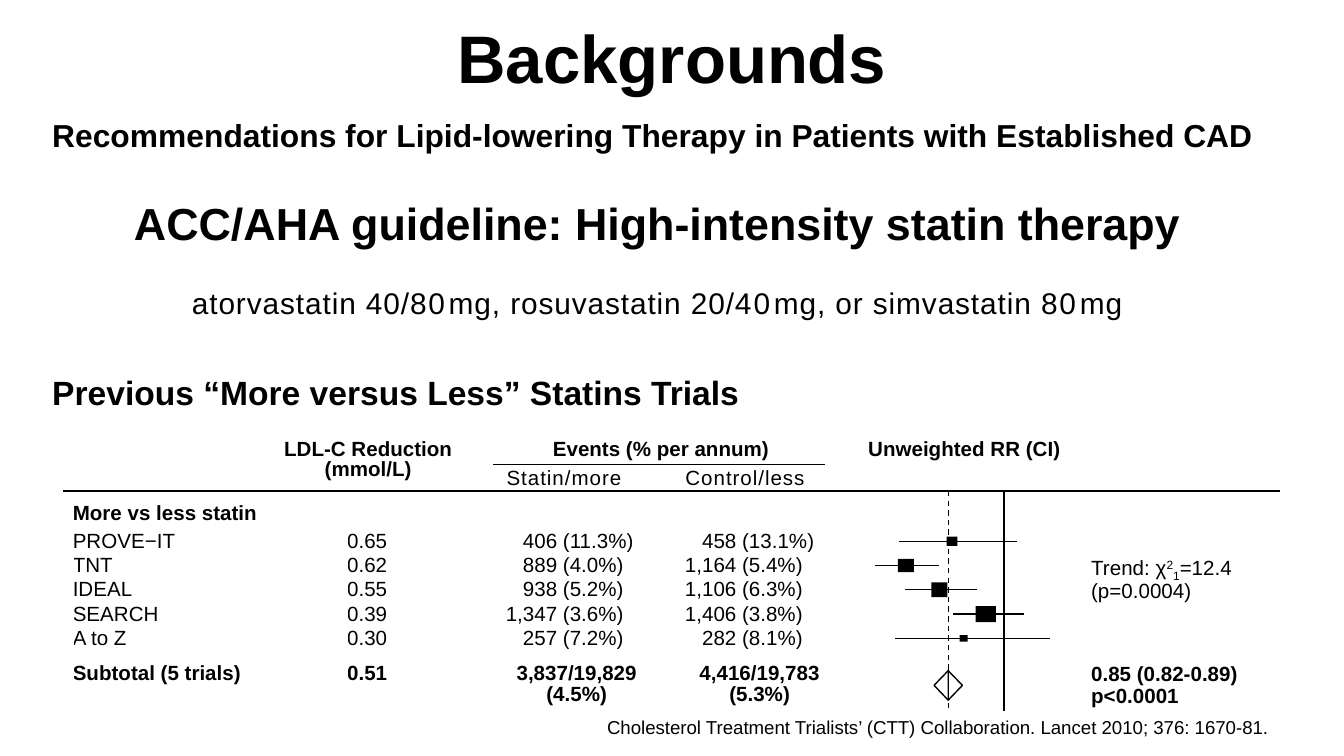
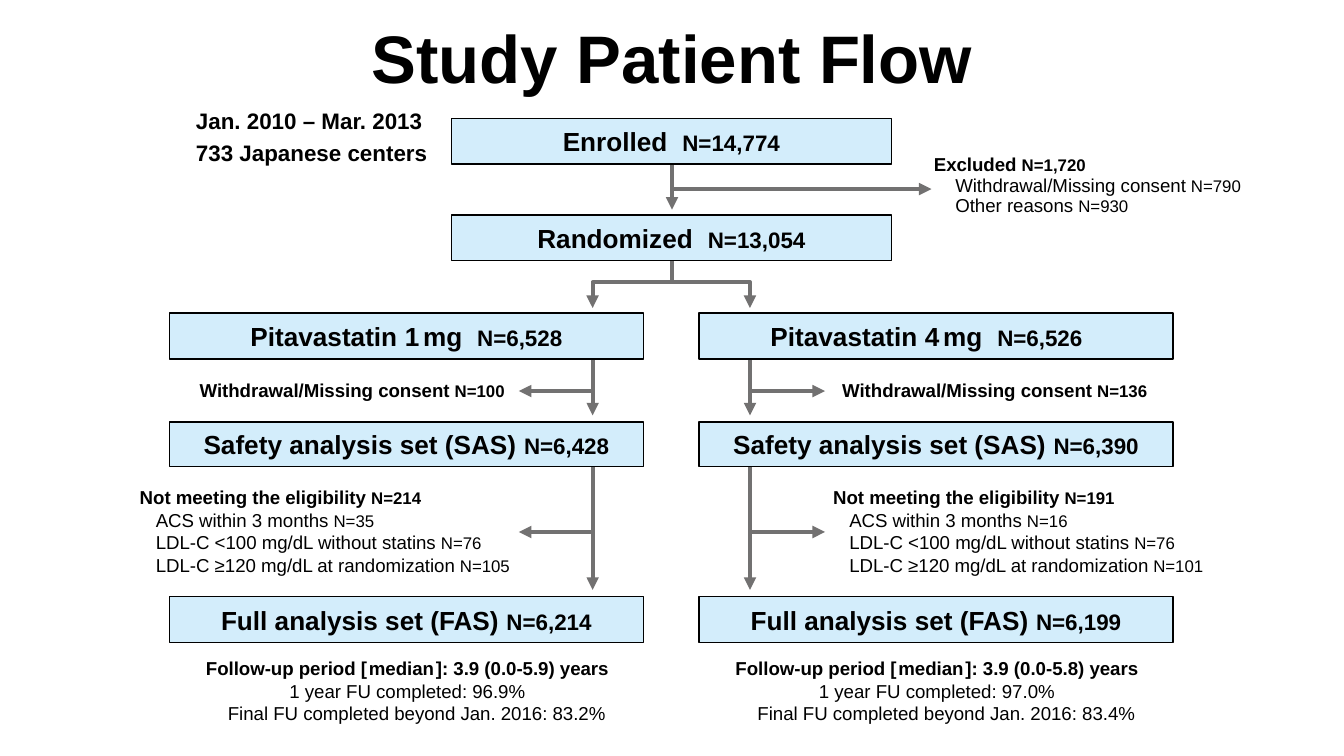
from dataclasses import dataclass
from typing import NamedTuple, Optional

from lxml.etree import SubElement
from pptx import Presentation
from pptx.dml.color import RGBColor
from pptx.enum.dml import MSO_LINE
from pptx.enum.shapes import MSO_CONNECTOR, MSO_SHAPE
from pptx.enum.text import MSO_ANCHOR, MSO_AUTO_SIZE, PP_ALIGN
from pptx.oxml.ns import qn
from pptx.util import Length, Pt

COLORS = {"text": "000000", "page": "FFFFFF", "box": "D3EDFB", "flow": "727171"}
FONT = "Arial"
LEFT, CENTER, RIGHT = PP_ALIGN.LEFT, PP_ALIGN.CENTER, PP_ALIGN.RIGHT
NO_INSETS = (0, 0, 0, 0)
BOX_INSETS = (7.2, 3.6, 7.2, 3.6)


class Span(NamedTuple):
    text: str
    size: float = 11
    bold: bool = False
    spacing: float = 0
    baseline: int = 0


@dataclass
class Para:
    spans: list[Span]
    align: PP_ALIGN = LEFT
    line: float | Length = 1.0
    before: float = 0
    after: float = 0
    indent: float = 0


class Trial(NamedTuple):
    name: str
    reduction: str
    more: str
    less: str
    low: float
    high: float
    center: float
    width: float
    height: float


class Arm(NamedTuple):
    box_left: float
    axis: float
    side_tip: float
    withdrawal_left: float
    criteria_left: float
    follow_left: float
    nudge: float
    dose: str
    assigned: str
    withdrawn: str
    safety: str
    ineligible: list[str]
    full: str
    follow_up: str
    one_year: str
    final: str


TRIALS = [
    Trial("PROVE−IT", "0.65", "406 (11.3%)", "458 (13.1%)", 481.7, 545, 510, 5.8, 5),
    Trial("TNT", "0.62", "889 (4.0%)", "1,164 (5.4%)", 468.7, 503.3, 485.3, 8.6, 7.2),
    Trial("IDEAL", "0.55", "938 (5.2%)", "1,106 (6.3%)", 484.6, 523.4, 503.3, 8.6, 7.9),
    Trial("SEARCH", "0.39", "1,347 (3.6%)", "1,406 (3.8%)", 510.5, 548.6, 528.1, 10.8, 8.6),
    Trial("A to Z", "0.30", "257 (7.2%)", "282 (8.1%)", 479.5, 562.3, 516.2, 4.3, 3.6),
]
SUBTOTAL = [["Subtotal (5 trials)"], ["0.51"], ["3,837/19,829", "(4.5%)"], ["4,416/19,783", "(5.3%)"]]

ARMS = [
    Arm(90.7, 317.5, 278, 100.8, 69.1, 101.5, 0, "1", "6,528", "100", "6,428",
        ["214", "35", "76", "105"], "6,214", "0.0-5.9", "96.9%", "83.2%"),
    Arm(374.4, 401.8, 442, 445, 440.6, 385.2, -5, "4", "6,526", "136", "6,390",
        ["191", "16", "76", "101"], "6,199", "0.0-5.8", "97.0%", "83.4%"),
]
CRITERIA = ["Not meeting the eligibility ", "ACS within 3 months ",
            "LDL-C <100 mg/dL without statins ", "LDL-C ≥120 mg/dL at randomization "]


def rgb(name: str) -> RGBColor:
    return RGBColor.from_string(COLORS[name])


def write(tf, paras: list[Para]) -> None:
    for i, para in enumerate(paras):
        p = tf.paragraphs[0] if i == 0 else tf.add_paragraph()
        p.alignment, p.line_spacing = para.align, para.line
        p.space_before, p.space_after = Pt(para.before), Pt(para.after)
        if para.indent:
            p._p.get_or_add_pPr().set("marL", str(Pt(para.indent)))
        for span in para.spans:
            r = p.add_run()
            r.text = span.text
            r.font.name, r.font.size, r.font.bold = FONT, Pt(span.size), span.bold
            r.font.color.rgb = rgb("text")
            if span.spacing:
                r._r.get_or_add_rPr().set("spc", str(round(span.spacing * 100)))
            if span.baseline:
                r._r.get_or_add_rPr().set("baseline", str(span.baseline * 1000))


def set_insets(target, insets: tuple) -> None:
    target.margin_left, target.margin_top, target.margin_right, target.margin_bottom = map(Pt, insets)


def add_text(s, left: float, top: float, width: float, height: float,
             paras: list[Para], insets: tuple = NO_INSETS) -> None:
    tf = s.shapes.add_textbox(Pt(left), Pt(top), Pt(width), Pt(height)).text_frame
    tf.word_wrap = True
    set_insets(tf, insets)
    write(tf, paras)


def plain(lines: list[str], size: float = 11, bold: bool = False, **layout) -> list[Para]:
    return [Para([Span(line, size, bold)], **layout) for line in lines]


def add_slide(prs, title: str):
    s = prs.slides.add_slide(prs.slide_layouts[5])
    s.background.fill.solid()
    s.background.fill.fore_color.rgb = rgb("page")
    sp = s.shapes.title
    sp.left, sp.top, sp.width, sp.height = Pt(0), Pt(4.3), Pt(720), Pt(51)
    tf = sp.text_frame
    tf.auto_size, tf.vertical_anchor = MSO_AUTO_SIZE.NONE, MSO_ANCHOR.BOTTOM
    set_insets(tf, BOX_INSETS)
    write(tf, plain([title], 36, True, align=CENTER))
    return s


def style_line(sp, color: str, width: float, ends: tuple = ()) -> None:
    sp.line.color.rgb = rgb(color)
    sp.line.width = Pt(width)
    for end in ends:
        SubElement(sp.line._get_or_add_ln(), qn(f"a:{end}"), type="triangle", w="med", len="med")


def add_line(s, start: tuple, end: tuple, color: str = "text", width: float = 0.75,
             arrow: bool = False, dashed: bool = False) -> None:
    sp = s.shapes.add_connector(MSO_CONNECTOR.STRAIGHT, *map(Pt, (*start, *end)))
    if dashed:
        sp.line.dash_style = MSO_LINE.DASH
    style_line(sp, color, width, ("tailEnd",) if arrow else ())
    SubElement(sp._element.spPr, qn("a:effectLst"))


def add_outline(s, points: list[tuple], color: str = "text", width: float = 0.75,
                closed: bool = False, ends: tuple = ()) -> None:
    pts = [(Pt(x), Pt(y)) for x, y in points]
    builder = s.shapes.build_freeform(*pts[0])
    builder.add_line_segments(pts[1:], close=closed)
    sp = builder.convert_to_shape()
    sp.shadow.inherit = False
    sp.fill.background()
    style_line(sp, color, width, ends)


def add_box(s, left: float, top: float, width: float, height: float, fill: str,
            spans: Optional[list[Span]] = None, nudge: float = 0) -> None:
    sp = s.shapes.add_shape(MSO_SHAPE.RECTANGLE, Pt(left), Pt(top), Pt(width), Pt(height))
    sp.shadow.inherit = False
    sp.fill.solid()
    sp.fill.fore_color.rgb = rgb(fill)
    if not spans:
        sp.line.fill.background()
        return
    style_line(sp, "text", 0.75)
    tf = sp.text_frame
    tf.vertical_anchor = MSO_ANCHOR.MIDDLE
    set_insets(tf, (7.2, 3.6, 7.2 - 2 * nudge, 3.6))
    write(tf, [Para(spans, CENTER)])


def add_trial_table(s) -> None:
    table = s.shapes.add_table(len(TRIALS) + 1, 4, Pt(39), Pt(283), Pt(408), Pt(97)).table
    table.first_row = table.horz_banding = False
    for column, width in zip(table.columns, (147, 85, 96, 80)):
        column.width = Pt(width)
    for i, row in enumerate(table.rows):
        last = i == len(TRIALS)
        row.height = Pt(32 if last else 13)
        values = SUBTOTAL if last else [[text] for text in TRIALS[i][:4]]
        for j, (cell, lines) in enumerate(zip(row.cells, values)):
            cell.fill.background()
            if last:
                set_insets(cell, (0, 7.7, 20 if j == 2 else 0, 0))
                paras = plain(lines, bold=True, line=0.9, align=CENTER if j > 1 else LEFT)
            else:
                set_insets(cell, (9.2 if j > 1 and "," not in lines[0] else 0, 0, 0, 0))
                paras = plain(lines, line=Pt(13))
            write(cell.text_frame, paras)


def add_forest_plot(s) -> None:
    for i, trial in enumerate(TRIALS):
        y = 290 + 13 * i
        add_box(s, trial.center - trial.width / 2, y - trial.height / 2, trial.width, trial.height, "text")
        add_line(s, (trial.low, y), (trial.high, y))
    add_line(s, (537.8, 381), (537.8, 263))
    add_line(s, (508, 263), (508, 381), dashed=True)
    top, bottom = (508, 359.3), (508, 375.1)
    add_outline(s, [bottom, (500.4, 367.2), top])
    add_outline(s, [top, bottom, (515.6, 367.2)], closed=True)


def build_backgrounds(prs) -> None:
    s = add_slide(prs, "Backgrounds")
    doses = [Span(text, 16, False, gap) for text, gap in (
        ("atorvastatin 40/8", 0.5), ("0", 2), ("mg, rosuvastatin 20/4", 0.5), ("0", 2),
        ("mg, or simvastatin 8", 0.5), ("0", 2), ("mg", 0.5))]
    add_text(s, 0, 62, 676, 160.6, [
        *plain(["Recommendations for Lipid-lowering Therapy in Patients with Established CAD"],
               17, True, after=8),
        *plain(["ACC/AHA guideline: High-intensity statin therapy"], 24, True, align=CENTER, line=1.5),
        Para(doses, CENTER, 2.0, after=6),
        *plain(["Previous “More versus Less” Statins Trials"], 18, True, before=21.5),
    ], (28, 0, 0, 0))
    add_text(s, 143.3, 236.2, 108, 21.6,
             plain(["LDL-C Reduction", "(mmol/L)"], bold=True, align=CENTER, line=0.8))
    add_text(s, 264.2, 236.2, 180, 10.8,
             plain(["Events (% per annum)"], bold=True, align=CENTER, line=0.8))
    add_text(s, 465.1, 236.2, 130.3, 10.8, plain(["Unweighted RR (CI)"], bold=True, line=0.8))
    for left, label in ((271.4, "Statin/more"), (367.2, "Control/less")):
        add_text(s, left, 249.1, 70, 13.7, [Para([Span(label, spacing=0.5)])])
    add_line(s, (264.2, 249), (442, 249))
    add_line(s, (34, 263), (685.5, 263))
    add_text(s, 39, 268, 121.7, 13, plain(["More vs less statin"], bold=True, line=Pt(13)))
    add_trial_table(s)
    add_forest_plot(s)
    trend = [Span("Trend: χ"), Span("2", baseline=30), Span("1", baseline=-25), Span("=12.4")]
    add_text(s, 584.6, 297.4, 108, 23.8, [Para(trend, line=0.9), *plain(["(p=0.0004)"], line=0.9)])
    add_text(s, 584.6, 355.7, 115.2, 23.8,
             plain(["0.85 (0.82-0.89)", "p<0.0001"], bold=True, line=0.9))
    add_text(s, 268.6, 380.2, 417.6, 19.4,
             plain(["Cholesterol Treatment Trialists’ (CTT) Collaboration. Lancet 2010; 376: 1670-81."],
                   10, align=RIGHT), BOX_INSETS)


def stage(label: str, count: str, gap: float = 0) -> list[Span]:
    return [Span(label, 14, True), Span(" ", 14, True, gap), Span(f"N={count}", 12, True)]


def counted(label: str, count: str, bold: bool = False) -> list[Span]:
    return [Span(label, 10, bold), Span(f"N={count}", 9, bold)]


def add_flow(s, start: tuple, end: tuple, arrow: bool = True) -> None:
    add_line(s, start, end, "flow", 2.25, arrow)


def add_arm(s, arm: Arm) -> None:
    add_flow(s, (arm.axis, 192.3), (arm.axis, 222.5))
    add_flow(s, (arm.axis, 250), (arm.axis, 316))
    for y in (209.5, 285):
        add_flow(s, (arm.axis, y), (arm.side_tip, y))
    treatment = [Span("Pitavastatin ", 14, True), Span(arm.dose, 14, True, 2), *stage("mg", arm.assigned, 4)]
    add_box(s, arm.box_left, 167.8, 254, 24.5, "box", treatment, arm.nudge)
    add_box(s, arm.box_left, 226, 254, 24, "box", stage("Safety analysis set (SAS)", arm.safety))
    add_box(s, arm.box_left, 319.7, 254, 24.5, "box", stage("Full analysis set (FAS)", arm.full))
    add_text(s, arm.withdrawal_left, 199.4, 175.7, 19.4,
             [Para(counted("Withdrawal/Missing consent ", arm.withdrawn, True), CENTER)],
             (2.9, 3.6, 2.9, 3.6))
    add_text(s, arm.criteria_left, 257, 213, 55.4,
             [Para(counted(label, count, i == 0), indent=11.5 if i else 2.9)
              for i, (label, count) in enumerate(zip(CRITERIA, arm.ineligible))],
             (2.9, 3.6, 2.9, 3.6))
    median = [Span(text, 10, True, gap) for text, gap in (
        ("Follow-up period ", 0), ("[", 1), ("media", 0), ("n", 1),
        (f"]: 3.9 ({arm.follow_up}) years", 0))]
    add_text(s, arm.follow_left, 348.5, 233.3, 44, [
        Para(median, CENTER),
        *plain([f"1 year FU completed: {arm.one_year}"], 10, align=CENTER),
        *plain([f"Final FU completed beyond Jan. 2016: {arm.final}"], 10, align=CENTER, indent=10),
    ], BOX_INSETS)


def build_patient_flow(prs) -> None:
    s = add_slide(prs, "Study Patient Flow")
    add_flow(s, (360, 87.8), (360, 112.3))
    add_flow(s, (360, 101.3), (499, 101.3))
    add_flow(s, (360, 139.7), (360, 151.2), arrow=False)
    left, right = (arm.axis for arm in ARMS)
    add_outline(s, [(left, 165), (left, 151.2), (right, 151.2), (right, 165)],
                "flow", 2.25, ends=("headEnd", "tailEnd"))
    for top, label, count in ((63.4, "Enrolled", "14,774"), (115.2, "Randomized", "13,054")):
        add_box(s, 242, top, 235.5, 24.5, "box", stage(label, count, 4))
    for arm in ARMS:
        add_arm(s, arm)
    add_text(s, 493.2, 79.9, 190, 40.3, [
        Para(counted("Excluded ", "1,720", True), line=0.9),
        Para(counted("Withdrawal/Missing consent ", "790"), line=0.9, indent=11.5),
        Para(counted("Other reasons ", "930"), line=0.9, indent=11.5),
    ], BOX_INSETS)
    add_text(s, 97.9, 51.1, 144, 42.5,
             plain(["Jan. 2010 – Mar. 2013", "733 Japanese centers"], 12, True, line=1.2), BOX_INSETS)


def main() -> None:
    prs = Presentation()
    prs.slide_width, prs.slide_height = Pt(720), Pt(405)
    build_backgrounds(prs)
    build_patient_flow(prs)
    prs.save("out.pptx")


if __name__ == "__main__":
    main()
